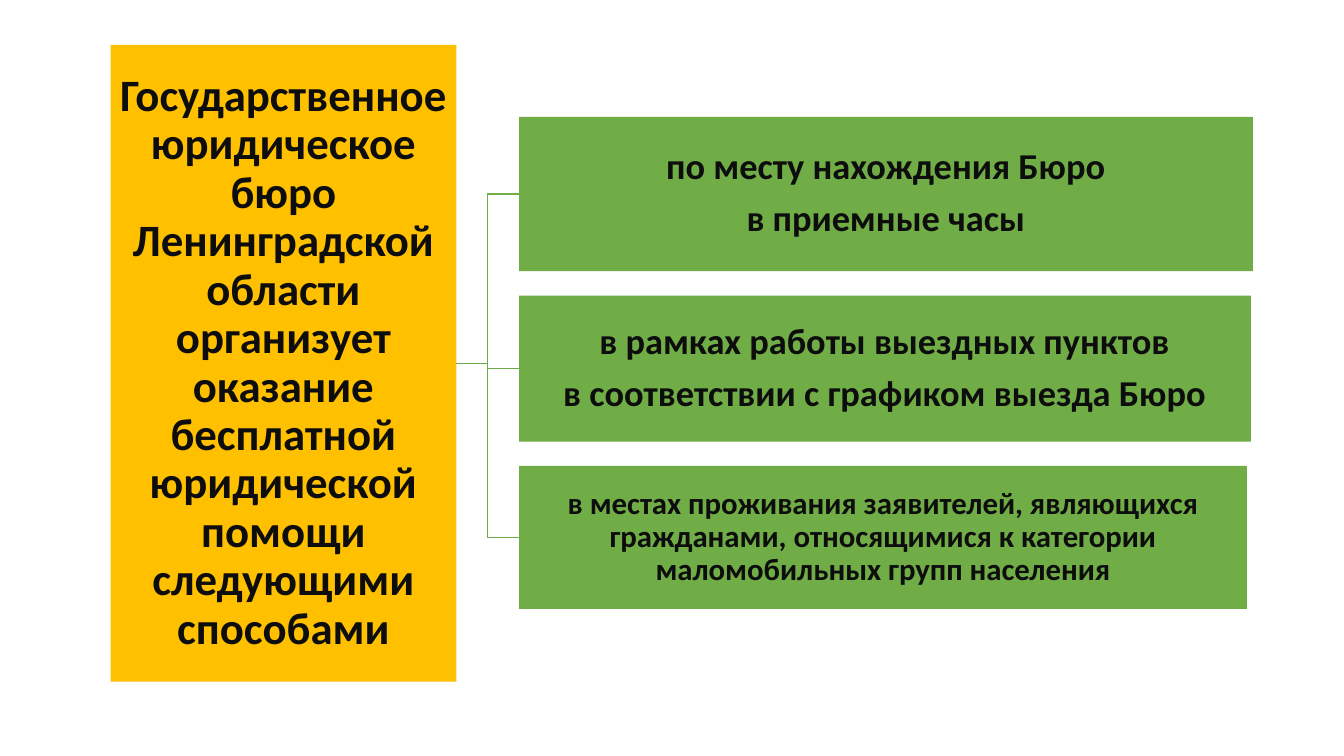
from pptx import Presentation
from pptx.dml.color import RGBColor
from pptx.enum.shapes import MSO_CONNECTOR as Link, MSO_SHAPE as Kind
from pptx.enum.text import MSO_ANCHOR as Anchor, PP_ALIGN as Align
from pptx.oxml.ns import qn
from pptx.util import Pt
from lxml.etree import SubElement

GOLD, GREEN, INK = "FFC000", "70AD47", "0D0D0D"
LEFT, GAP = 370.8, 17.3
TITLE = ("Государственное юридическое бюро Ленинградской области\v"
         "организует оказание бесплатной юридической помощи "
         "следующими способами")
# width, height, text size, paragraphs
WAYS = [
    (524.2, 110.2, 26, ["по месту нахождения Бюро", "в приемные часы"]),
    (522.7, 104.4, 26, ["в рамках работы выездных пунктов",
                        "в соответствии с графиком выезда Бюро"]),
    (519.8, 102.2, 22, ["в местах проживания заявителей, являющихся гражданами, "
                        "относящимися к категории маломобильных групп населения"]),
]


def color(code):
    return RGBColor.from_string(code)


def block(slide, box, fill, size, lines):
    """Add a filled rectangle with centred bold text."""
    shape = slide.shapes.add_shape(Kind.RECTANGLE, *map(Pt, box))
    shape.shadow.inherit = False
    shape.fill.solid()
    shape.fill.fore_color.rgb = color(fill)
    shape.line.fill.background()
    frame = shape.text_frame
    frame.word_wrap = True
    frame.vertical_anchor = Anchor.MIDDLE
    frame.margin_left = frame.margin_right = Pt(1.4)
    frame.margin_top = frame.margin_bottom = Pt(1.4)
    frame.text = "\n".join(lines)
    for par in frame.paragraphs:
        par.alignment = Align.CENTER
        par.line_spacing = 0.9
        par.space_after = Pt(0.35 * size)
        font = par.font
        font.name, font.size, font.bold = "Calibri", Pt(size), True
        font.color.rgb = color(INK)
    return shape


def branch(slide, root, leaf):
    """Join the right side of root to the left side of leaf."""
    link = slide.shapes.add_connector(Link.ELBOW, 0, 0, 0, 0)
    link.begin_connect(root, 3)
    link.end_connect(leaf, 1)
    link.line.color.rgb = color(GREEN)
    link.line.width = Pt(1)
    SubElement(link._element.spPr, qn("a:effectLst"))


def tree(slide, root, left, top):
    """Stack the ways from the given corner and join each to root."""
    for width, height, size, lines in WAYS:
        leaf = block(slide, (left, top, width, height), GREEN, size, lines)
        branch(slide, root, leaf)
        top += height + GAP


def main():
    deck = Presentation()
    deck.slide_width, deck.slide_height = Pt(960), Pt(540)
    slide = deck.slides.add_slide(deck.slide_layouts[6])
    root = block(slide, (79, 32, 247, 455), GOLD, 32, [TITLE])
    tree(slide, root, LEFT, 83.6)
    deck.save("out.pptx")


if __name__ == "__main__":
    main()
